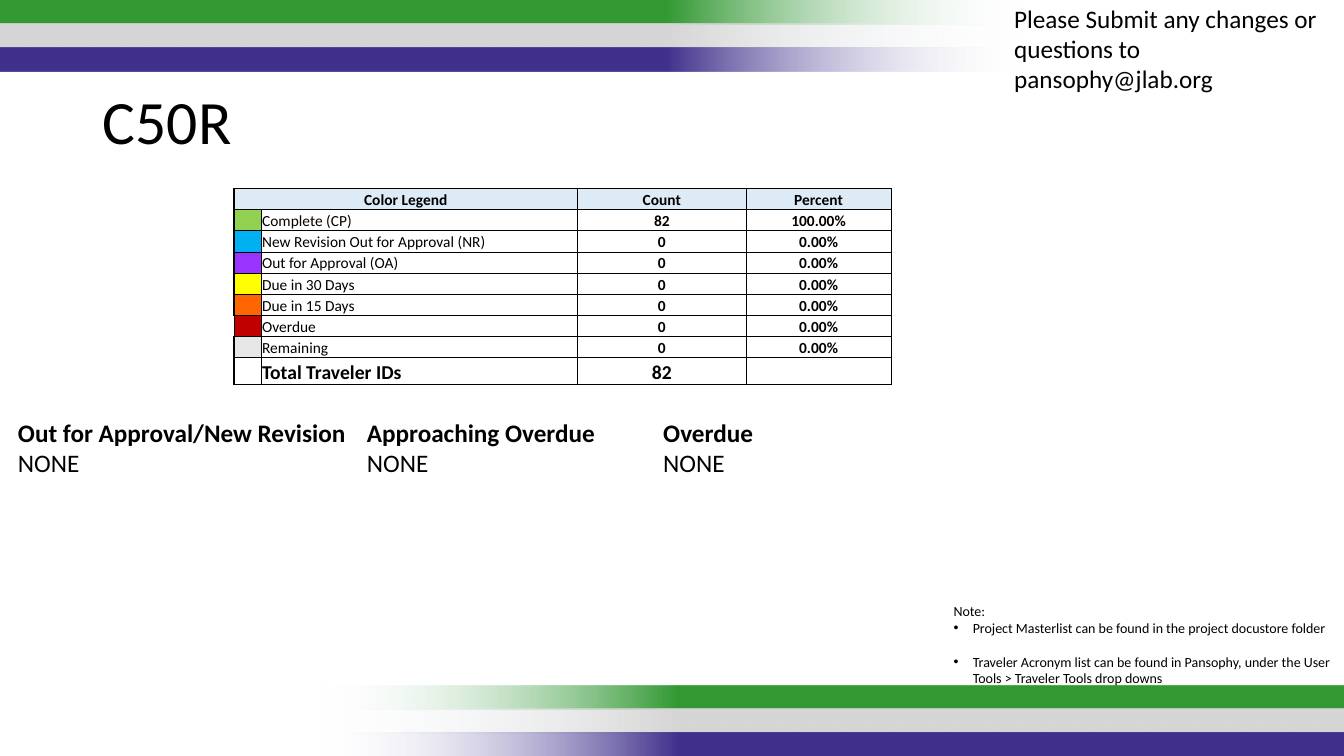
from copy import deepcopy
from dataclasses import dataclass

from lxml import etree
from pptx import Presentation
from pptx import util as u
from pptx.dml.color import RGBColor
from pptx.enum import shapes, text
from pptx.oxml.ns import qn


@dataclass(frozen=True)
class Theme:
    font: str = "Calibri"
    ink: str = "000000"
    header: str = "DDEBF7"
    fade: str = "F7FAFD"
    stripes: tuple = ("339933", "D6D6D6", "42318C")
    title: int = 44
    body: int = 18
    total: int = 14
    table: int = 11
    note: int = 10


THEME = Theme()
THIN, MEDIUM = 0.5, 1
COLUMN_WIDTHS = (0.27, 3.14, 1.67, 1.44)
ROW_HEIGHT, TOTAL_HEIGHT = 0.21, 0.27
STATUSES = [
    ("92D050", "Complete (CP)", "82", "100.00%"),
    ("00B0F0", "New Revision Out for Approval (NR)", "0", "0.00%"),
    ("9933FF", "Out for Approval (OA)", "0", "0.00%"),
    ("FFFF00", "Due in 30 Days", "0", "0.00%"),
    ("FF6600", "Due in 15 Days", "0", "0.00%"),
    ("C00000", "Overdue", "0", "0.00%"),
    ("E7E6E6", "Remaining", "0", "0.00%"),
]


def add_run(paragraph, words, size, bold=False):
    run = paragraph.add_run()
    run.text = words
    run.font.name = THEME.font
    run.font.size = u.Pt(size)
    run.font.bold = bold
    run.font.color.rgb = RGBColor.from_string(THEME.ink)


def place(shape, left, top, width, height):
    shape.left, shape.top = u.Inches(left), u.Inches(top)
    shape.width, shape.height = u.Inches(width), u.Inches(height)


def add_stripe(slide, left, top, color, rotation):
    """Add a bar that fades out at its left end before rotation."""
    bar = slide.shapes.add_shape(
        shapes.MSO_SHAPE.RECTANGLE,
        u.Inches(left), u.Inches(top), u.Inches(10.17), u.Inches(0.24))
    bar.rotation = rotation
    bar.shadow.inherit = False
    bar.line.fill.background()
    bar.fill.gradient()
    bar.fill.gradient_angle = 0
    clear, solid = bar.fill.gradient_stops
    clear.position, solid.position = 0, 0.35
    clear.color.rgb = RGBColor.from_string(THEME.fade)
    solid.color.rgb = RGBColor.from_string(color)
    stops = bar._element.spPr.find(".//" + qn("a:gsLst"))
    etree.SubElement(stops[0][0], qn("a:alpha"), val="0")
    end = deepcopy(stops[1])
    end.set("pos", "100000")
    stops.append(end)


def add_stripes(slide, left, top, rotation=0):
    for index, color in enumerate(THEME.stripes):
        add_stripe(slide, left, top + index * 0.235, color, rotation)


def add_title(slide, words):
    title = slide.shapes.title
    place(title, 0.92, 0.86, 11.5, 0.99)
    title.text_frame.vertical_anchor = text.MSO_ANCHOR.TOP
    paragraph = title.text_frame.paragraphs[0]
    paragraph.alignment = text.PP_ALIGN.LEFT
    paragraph.line_spacing = 0.9
    add_run(paragraph, words, THEME.title)


def add_text_box(slide, left, top, width, height):
    box = slide.shapes.add_textbox(
        u.Inches(left), u.Inches(top), u.Inches(width), u.Inches(height))
    box.text_frame.word_wrap = True
    return box.text_frame


def add_status_list(slide, left, width, heading):
    frame = add_text_box(slide, left, 4.09, width, 0.71)
    add_run(frame.paragraphs[0], heading, THEME.body, bold=True)
    add_run(frame.add_paragraph(), "NONE", THEME.body)


def add_bullet(frame, words, space_before=0):
    paragraph = frame.add_paragraph()
    paragraph.space_before = u.Pt(space_before)
    properties = paragraph._p.get_or_add_pPr()
    properties.set("marL", str(u.Inches(0.19)))
    properties.set("indent", str(u.Inches(-0.19)))
    etree.SubElement(properties, qn("a:buFont"), typeface="Arial")
    etree.SubElement(properties, qn("a:buChar"), char="•")
    add_run(paragraph, words, THEME.note)


def set_borders(cell, **widths):
    properties = cell._tc.get_or_add_tcPr()
    for side in "LRTB":
        width = u.Pt(widths.get(side, THIN))
        line = etree.SubElement(properties, qn("a:ln" + side), w=str(width))
        fill = etree.SubElement(line, qn("a:solidFill"))
        etree.SubElement(fill, qn("a:srgbClr"), val=THEME.ink)


def fill_cell(cell, words, size, bold, centered, color):
    cell.margin_left = cell.margin_right = cell.margin_top = u.Inches(0.01)
    cell.margin_bottom = 0
    cell.vertical_anchor = text.MSO_ANCHOR.BOTTOM
    if color:
        cell.fill.solid()
        cell.fill.fore_color.rgb = RGBColor.from_string(color)
    else:
        cell.fill.background()
    paragraph = cell.text_frame.paragraphs[0]
    if centered:
        paragraph.alignment = text.PP_ALIGN.CENTER
    if words:
        add_run(paragraph, words, size, bold)
    else:
        etree.SubElement(paragraph._p, qn("a:endParaRPr"), sz=str(size * 100))


def add_legend_table(slide):
    rows = [("Color Legend", "", "Count", "Percent")]
    rows += [("", *status[1:]) for status in STATUSES]
    rows += [("", "Total Traveler IDs", "82", "")]
    last = len(rows) - 1
    height = ROW_HEIGHT * last + TOTAL_HEIGHT
    frame = slide.shapes.add_table(
        len(rows), len(COLUMN_WIDTHS), u.Inches(2.32), u.Inches(1.87),
        u.Inches(sum(COLUMN_WIDTHS)), u.Inches(height))
    table = frame.table
    table.first_row = table.horz_banding = False
    for column, width in zip(table.columns, COLUMN_WIDTHS):
        column.width = u.Inches(width)
    for r, values in enumerate(rows):
        table.rows[r].height = u.Inches(TOTAL_HEIGHT if r == last else ROW_HEIGHT)
        for c, words in enumerate(values):
            cell = table.cell(r, c)
            header, total = r == 0, r == last
            set_borders(
                cell,
                L=MEDIUM if c == 0 and values[1] != "Overdue" else THIN,
                R=MEDIUM if header and c == 3 else THIN,
                T=MEDIUM if header else THIN,
                B=MEDIUM if total else THIN)
            color = THEME.header if header else None
            if c == 0 and not header and not total:
                color = STATUSES[r - 1][0]
            fill_cell(cell, words, THEME.total if total else THEME.table,
                      bold=header or total or c > 1,
                      centered=header or c > 1, color=color)
    table.cell(0, 0).merge(table.cell(0, 1))


def main():
    presentation = Presentation()
    presentation.slide_width = u.Inches(13.33)
    presentation.slide_height = u.Inches(7.5)
    slide = presentation.slides.add_slide(presentation.slide_layouts[5])
    add_stripes(slide, -0.01, 0, rotation=180)
    add_stripes(slide, 3.17, 6.8)
    add_title(slide, "C50R")
    add_legend_table(slide)
    add_status_list(slide, 0.08, 3.45, "Out for Approval/New Revision")
    add_status_list(slide, 3.54, 2.95, "Approaching Overdue")
    add_status_list(slide, 6.48, 6.03, "Overdue")
    contact = add_text_box(slide, 9.96, -0.02, 3.38, 1.01)
    add_run(contact.paragraphs[0],
            "Please Submit any changes or questions to pansophy@jlab.org",
            THEME.body)
    note = add_text_box(slide, 9.36, 5.93, 3.97, 0.94)
    add_run(note.paragraphs[0], "Note:", THEME.note)
    add_bullet(note, "Project Masterlist can be found in the project docustore folder")
    add_bullet(note, "Traveler Acronym list can be found in Pansophy, under the User "
               "Tools > Traveler Tools drop downs", space_before=12)
    presentation.save("out.pptx")


if __name__ == "__main__":
    main()
